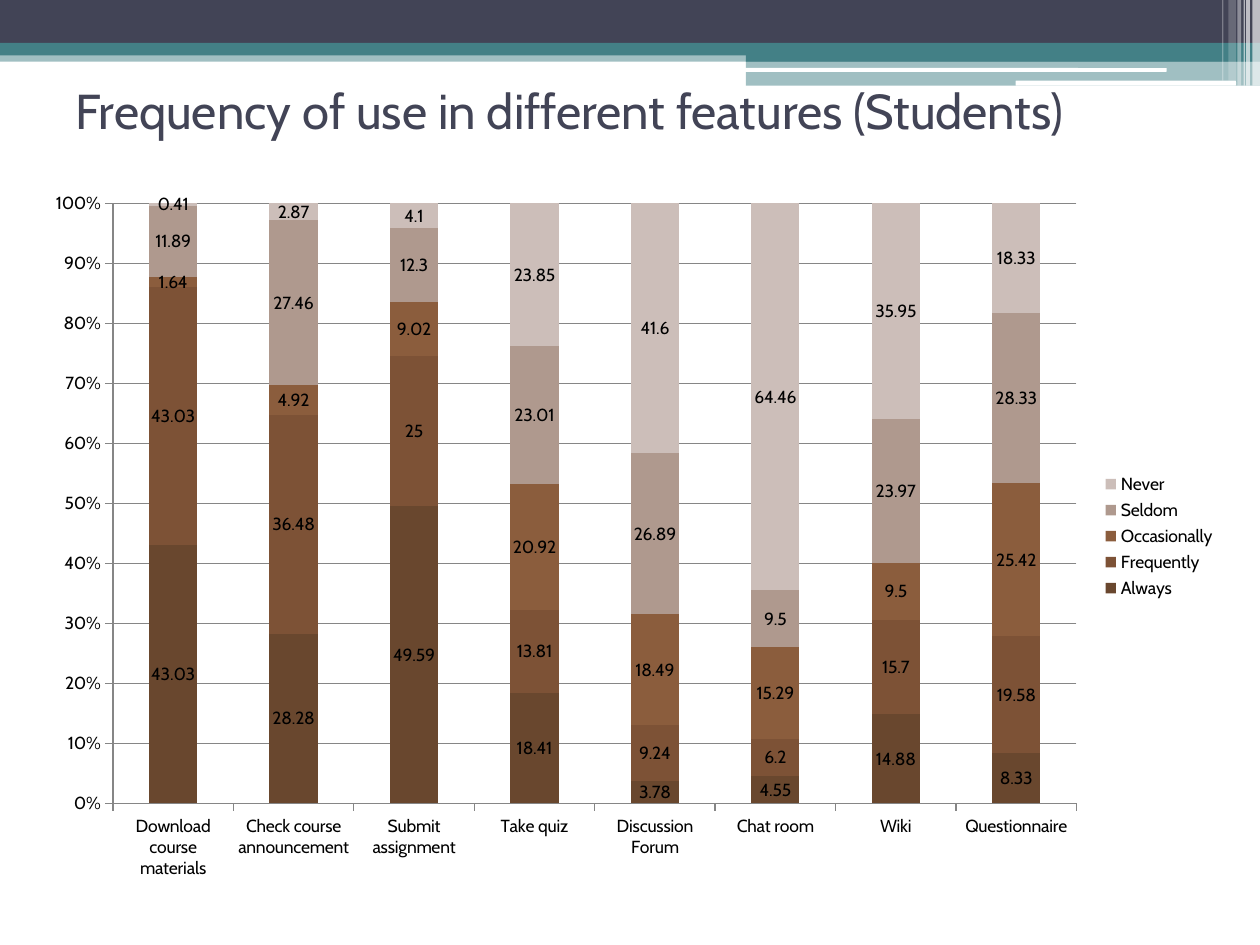
from dataclasses import dataclass

from lxml.etree import SubElement
from pptx import Presentation
from pptx.chart.data import CategoryChartData
from pptx.dml.color import RGBColor
from pptx.enum.chart import XL_CHART_TYPE, XL_LEGEND_POSITION, XL_TICK_MARK
from pptx.enum.shapes import MSO_SHAPE
from pptx.enum.text import MSO_ANCHOR, PP_ALIGN
from pptx.oxml import parse_xml
from pptx.oxml.ns import nsdecls, qn
from pptx.util import Inches, Pt


@dataclass(frozen=True)
class Theme:
    font: str = "Cabin"
    title_size: int = 28
    chart_size: int = 10
    navy: str = "424456"
    teal: str = "438086"
    white: str = "FFFFFF"
    black: str = "000000"
    grid: str = "868686"
    series: tuple = ("69472E", "7D5236", "8B5D3D", "AF998E", "CCBEB9")


THEME = Theme()

# The slide is a grid of 1000 columns by 750 rows
COLUMNS, ROWS = 1000, 750
CELL = Inches(10) // COLUMNS

# Header bands: left, top, width, height, colour, opacity in percent
BANDS = [
    (0, 40, 1000, 9, THEME.teal, 50),
    (0, 0, 1000, 34, THEME.navy, 100),
    (0, 34, 1000, 10, THEME.teal, 100),
    (592, 39, 408, 10, THEME.teal, 100),
    (592, 48, 408, 20, THEME.teal, 50),
]
# White rounded bars: left, top, width, height
BARS = [(591, 54, 335, 3), (806, 64, 175, 4)]
# White stripes from the top edge: left, width, height, opacity in percent
STRIPES = [(994, 6, 68, 65), (989, 3, 68, 65), (987, 1, 68, 60),
           (982, 3, 68, 40), (975, 6, 64, 20), (970, 1, 64, 30)]

FEATURES = ["Download course materials", "Check course announcement",
            "Submit assignment", "Take quiz", "Discussion Forum",
            "Chat room", "Wiki", "Questionnaire"]
FREQUENCIES = {
    "Always": [43.03, 28.28, 49.59, 18.41, 3.78, 4.55, 14.88, 8.33],
    "Frequently": [43.03, 36.48, 25, 13.81, 9.24, 6.2, 15.7, 19.58],
    "Occasionally": [1.64, 4.92, 9.02, 20.92, 18.49, 15.29, 9.5, 25.42],
    "Seldom": [11.89, 27.46, 12.3, 23.01, 26.89, 9.5, 23.97, 28.33],
    "Never": [0.41, 2.87, 4.1, 23.85, 41.6, 64.46, 35.95, 18.33],
}


def place(*cells):
    """Turn grid cells into slide lengths."""
    return [cell * CELL for cell in cells]


def color(value):
    return RGBColor.from_string(value)


def style_font(font, size, value):
    font.name = THEME.font
    font.size = Pt(size)
    font.color.rgb = color(value)


def add_block(slide, cells, value, opacity=100, kind=MSO_SHAPE.RECTANGLE):
    shape = slide.shapes.add_shape(kind, *place(*cells))
    shape.shadow.inherit = False
    shape.line.fill.background()
    shape.fill.solid()
    shape.fill.fore_color.rgb = color(value)
    if opacity < 100:
        fill_color = shape.fill._xPr.find(qn("a:solidFill"))[0]
        SubElement(fill_color, qn("a:alpha")).set("val", str(opacity * 1000))


def add_header(slide):
    for *cells, value, opacity in BANDS:
        add_block(slide, cells, value, opacity)
    for cells in BARS:
        add_block(slide, cells, THEME.white, kind=MSO_SHAPE.ROUNDED_RECTANGLE)
    for left, width, height, opacity in STRIPES:
        add_block(slide, (left, 0, width, height), THEME.white, opacity)


def add_title(slide, text):
    title = slide.shapes.title
    title.left, title.top, title.width, title.height = place(50, 25, 900, 125)
    title.text_frame.vertical_anchor = MSO_ANCHOR.MIDDLE
    paragraph = title.text_frame.paragraphs[0]
    paragraph.alignment = PP_ALIGN.LEFT
    run = paragraph.add_run()
    run.text = text
    style_font(run.font, THEME.title_size, THEME.navy)
    # Bring the title in front of the header
    slide.shapes._spTree.append(title._element)


def style_axis(axis):
    axis.major_tick_mark = XL_TICK_MARK.OUTSIDE
    axis.minor_tick_mark = XL_TICK_MARK.NONE
    axis.format.line.color.rgb = color(THEME.grid)
    axis.format.line.width = Pt(0.75)


def set_plot_area(chart, **shares):
    """Fix the inner plot area as shares of the chart's size."""
    plot_area = chart._chartSpace.chart.plotArea
    for old in plot_area.findall(qn("c:layout")):
        plot_area.remove(old)
    values = "".join(f'<c:{key} val="{share}"/>' for key, share in shares.items())
    plot_area.insert(0, parse_xml(
        f'<c:layout {nsdecls("c")}><c:manualLayout>'
        '<c:layoutTarget val="inner"/><c:xMode val="edge"/><c:yMode val="edge"/>'
        f'{values}</c:manualLayout></c:layout>'))


def add_frequency_chart(slide):
    data = CategoryChartData()
    data.categories = FEATURES
    for name, values in FREQUENCIES.items():
        data.add_series(name, values)
    chart = slide.shapes.add_chart(XL_CHART_TYPE.COLUMN_STACKED_100,
                                   *place(25, 142, 950, 567), data).chart
    chart.has_title = False
    style_font(chart.font, THEME.chart_size, THEME.black)
    set_plot_area(chart, x=0.068, y=0.034, w=0.805, h=0.84)

    # Legend and axes
    chart.has_legend = True
    chart.legend.position = XL_LEGEND_POSITION.RIGHT
    chart.legend.include_in_layout = False
    style_axis(chart.category_axis)
    style_axis(chart.value_axis)
    chart.value_axis.maximum_scale = 1
    chart.value_axis.major_unit = 0.1
    chart.value_axis.tick_labels.number_format = "0%"
    chart.value_axis.tick_labels.number_format_is_linked = False
    gridlines = chart.value_axis.major_gridlines.format.line
    gridlines.color.rgb = color(THEME.grid)
    gridlines.width = Pt(0.75)

    # Columns and their values
    plot = chart.plots[0]
    plot.gap_width, plot.overlap = 150, 100
    plot.vary_by_categories = False
    for series, value in zip(plot.series, THEME.series):
        series.format.fill.solid()
        series.format.fill.fore_color.rgb = color(value)
        labels = series.data_labels
        labels.show_value = True
        style_font(labels.font, THEME.chart_size, THEME.black)


def main():
    presentation = Presentation()
    presentation.slide_width = COLUMNS * CELL
    presentation.slide_height = ROWS * CELL
    slide = presentation.slides.add_slide(presentation.slide_layouts[5])
    add_header(slide)
    add_title(slide, "Frequency of use in different features (Students)")
    add_frequency_chart(slide)
    presentation.save("out.pptx")


if __name__ == "__main__":
    main()
